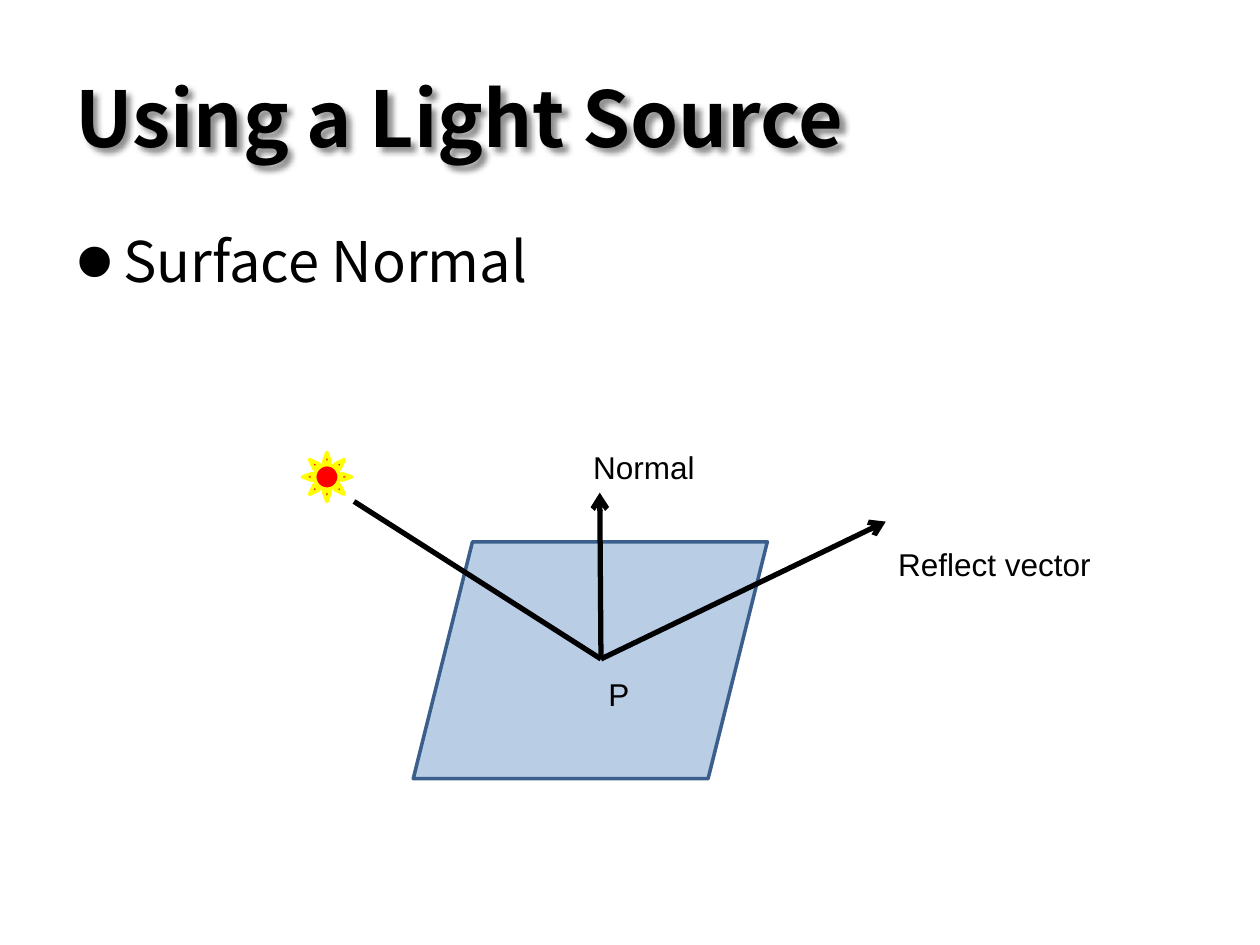
from dataclasses import dataclass

from lxml import etree
from pptx import Presentation
from pptx import util as u
from pptx.dml.color import RGBColor
from pptx.enum import shapes, text
from pptx.oxml import ns


@dataclass(frozen=True)
class Theme:
    ink: str = "000000"
    surface: str = "B9CDE5"
    surface_edge: str = "3A5F8C"
    sun: str = "FF0000"
    sun_edge: str = "FFFF00"
    heading_font: str = "Noto Sans CJK SC"
    label_font: str = "Arial"
    title_size: int = 44
    body_size: int = 32
    label_size: int = 18
    edge_width: int = 2
    ray_width: int = 3


def add_element(parent, tag, **attributes):
    return etree.SubElement(parent, ns.qn(tag), attributes)


class SlideBuilder:
    def __init__(self, slide, theme):
        self.slide = slide
        self.theme = theme

    def add_text(self, box, wording, size, font, bold=False, wrap=True,
                 anchor=text.MSO_ANCHOR.TOP, bullet=False):
        shape = self.slide.shapes.add_textbox(*map(u.Inches, box))
        frame = shape.text_frame
        frame.word_wrap = wrap
        frame.vertical_anchor = anchor
        paragraph = frame.paragraphs[0]
        if bullet:
            self.add_bullet(paragraph)
        run = paragraph.add_run()
        run.text = wording
        run.font.size = u.Pt(size)
        run.font.name = font
        run.font.bold = bold
        run.font.color.rgb = RGBColor.from_string(self.theme.ink)
        add_element(run.font._element, "a:ea", typeface=font)
        return shape

    def add_bullet(self, paragraph):
        properties = paragraph._p.get_or_add_pPr()
        indent = u.Inches(0.38)
        properties.set("marL", str(indent))
        properties.set("indent", str(-indent))
        add_element(properties, "a:buSzPct", val="200000")
        add_element(properties, "a:buFont", typeface=self.theme.label_font)
        add_element(properties, "a:buChar", char="•")

    def add_title(self, box, wording):
        shape = self.add_text(box, wording, self.theme.title_size,
                              self.theme.heading_font, bold=True,
                              anchor=text.MSO_ANCHOR.MIDDLE)
        effects = add_element(shape._element.spPr, "a:effectLst")
        shadow = add_element(effects, "a:outerShdw", blurRad="38100",
                             dist="38100", dir="2700000", algn="tl")
        color = add_element(shadow, "a:srgbClr", val=self.theme.ink)
        add_element(color, "a:alpha", val="43000")

    def add_body(self, box, wording):
        self.add_text(box, wording, self.theme.body_size,
                      self.theme.heading_font, bullet=True)

    def add_label(self, box, wording):
        self.add_text(box, wording, self.theme.label_size,
                      self.theme.label_font)

    def add_shape(self, kind, box, fill, edge):
        shape = self.slide.shapes.add_shape(kind, *map(u.Inches, box))
        shape.shadow.inherit = False
        shape.fill.solid()
        shape.fill.fore_color.rgb = RGBColor.from_string(fill)
        shape.line.color.rgb = RGBColor.from_string(edge)
        shape.line.width = u.Pt(self.theme.edge_width)

    def add_ray(self, start, end, arrow=False):
        connector = self.slide.shapes.add_connector(
            shapes.MSO_CONNECTOR.STRAIGHT, *map(u.Inches, start + end))
        connector.line.color.rgb = RGBColor.from_string(self.theme.ink)
        connector.line.width = u.Pt(self.theme.ray_width)
        if arrow:
            add_element(connector.line._get_or_add_ln(), "a:tailEnd",
                        type="arrow")
        add_element(connector._element.spPr, "a:effectLst")


def main():
    presentation = Presentation()
    presentation.slide_width = u.Inches(10)
    presentation.slide_height = u.Inches(7.5)
    slide = presentation.slides.add_slide(presentation.slide_layouts[6])
    theme = Theme()
    builder = SlideBuilder(slide, theme)

    builder.add_title((0.5, 0.3, 7.18, 1.25), "Using a Light Source")
    builder.add_body((0.5, 1.75, 9, 4.95), "Surface Normal")

    builder.add_shape(shapes.MSO_SHAPE.PARALLELOGRAM, (3.28, 4.3, 2.81, 1.88),
                      theme.surface, theme.surface_edge)
    point = (4.77, 5.23)
    builder.add_ray(point, (7.03, 4.14), arrow=True)
    builder.add_ray(point, (2.81, 3.98))
    builder.add_ray(point, (4.76, 3.91), arrow=True)
    builder.add_shape(shapes.MSO_SHAPE.SUN, (2.4, 3.59, 0.39, 0.39),
                      theme.sun, theme.sun_edge)

    builder.add_label((4.61, 3.51, 1.18, 0.4), "Normal")
    builder.add_label((7.03, 4.28, 1.73, 0.4), "Reflect vector")
    builder.add_label((4.73, 5.31, 0.63, 0.4), "P")

    presentation.save("out.pptx")


if __name__ == "__main__":
    main()
